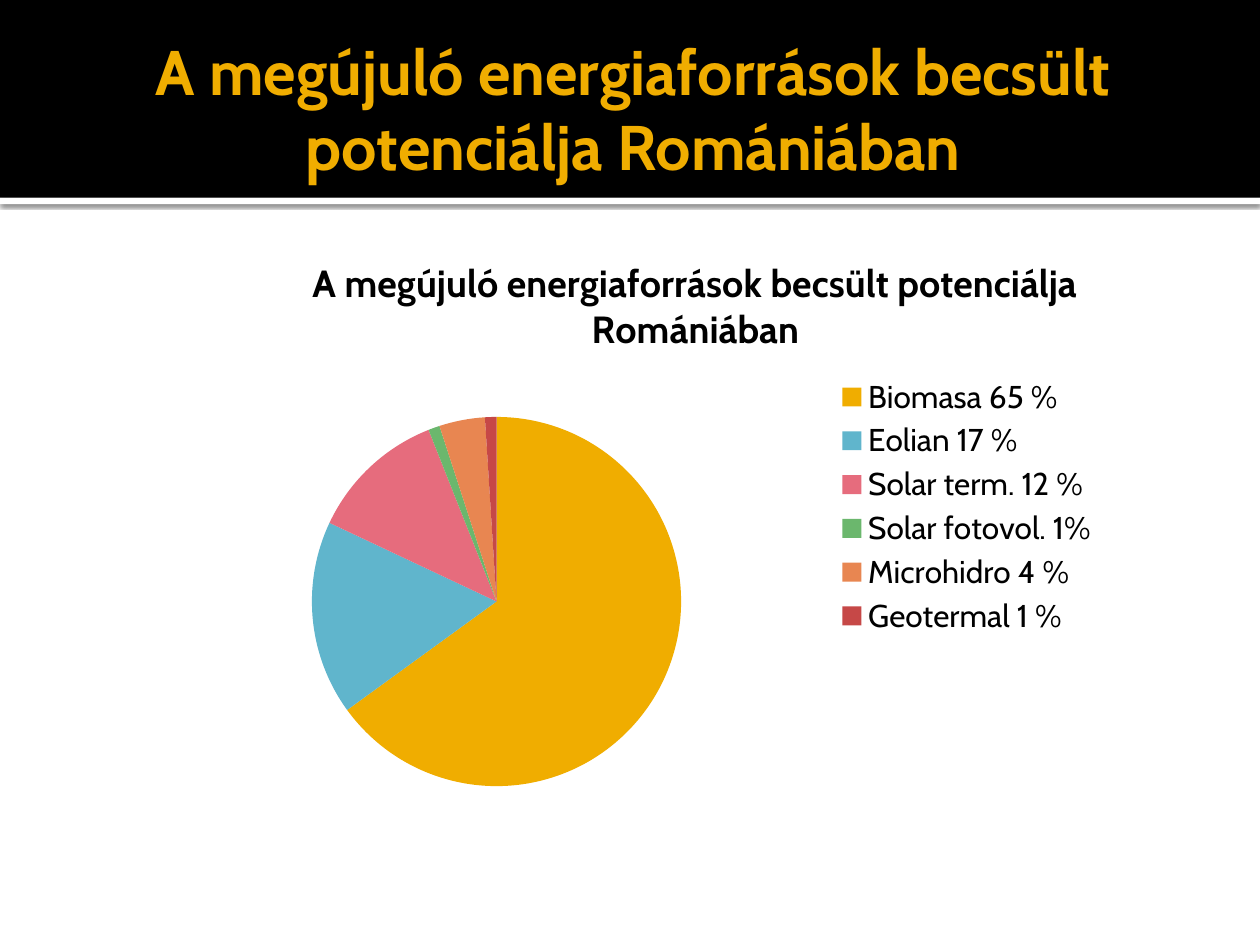
from lxml import etree
from pptx import Presentation
from pptx.chart.data import CategoryChartData
from pptx.dml.color import RGBColor
from pptx.enum.chart import XL_CHART_TYPE, XL_LEGEND_POSITION
from pptx.enum.shapes import MSO_SHAPE
from pptx.enum.text import MSO_ANCHOR, PP_ALIGN
from pptx.oxml import parse_xml
from pptx.oxml.ns import nsdecls, qn
from pptx.util import Inches, Pt

PIE = XL_CHART_TYPE.PIE
LEGEND_RIGHT = XL_LEGEND_POSITION.RIGHT
RECTANGLE = MSO_SHAPE.RECTANGLE
MIDDLE = MSO_ANCHOR.MIDDLE
CENTER = PP_ALIGN.CENTER

FONT = "Cabin"
HEADING = "A megújuló energiaforrások becsült potenciálja Romániában"
COLORS = {
    "band": "000000",
    "rule": "FFFFFF",
    "heading": "F0AD00",
    "text": "000000",
}
SOURCES = [
    ("Biomasa 65 %", 65, "F0AD00"),
    ("Eolian 17 %", 17, "60B5CC"),
    ("Solar term. 12 %", 12, "E66C7D"),
    ("Solar fotovol. 1%", 1, "6BB76D"),
    ("Microhidro 4 %", 4, "E88651"),
    ("Geotermal 1 %", 1, "C64847"),
]


def style_font(font, size, color, bold=False):
    """Set typeface, size, colour and weight of a font."""
    font.name = FONT
    font.size = Pt(size)
    font.bold = bold
    font.color.rgb = RGBColor.from_string(color)


def write_text(frame, text, size=18, color=COLORS["text"], bold=False, align=CENTER):
    """Write one formatted paragraph into a text frame."""
    paragraph = frame.paragraphs[0]
    paragraph.alignment = align
    run = paragraph.add_run()
    run.text = text
    style_font(run.font, size, color, bold)


def add_bar(slide, top, height, color):
    """Add a plain bar across the full slide width."""
    bar = slide.shapes.add_shape(RECTANGLE, 0, Inches(top), Inches(10), Inches(height))
    bar.shadow.inherit = False
    bar.fill.solid()
    bar.fill.fore_color.rgb = RGBColor.from_string(color)
    bar.line.fill.background()
    return bar


def cast_shadow(bar, blur, distance, opacity):
    """Give a bar a soft black shadow that falls downwards."""
    effects = bar.element.spPr.find(qn("a:effectLst"))
    shadow = etree.SubElement(
        effects, qn("a:outerShdw"), blurRad=str(Pt(blur)), dist=str(Pt(distance)),
        dir="5400000", algn="tl", rotWithShape="0")
    black = etree.SubElement(shadow, qn("a:srgbClr"), val="000000")
    etree.SubElement(black, qn("a:alpha"), val=str(opacity * 1000))


def add_heading(slide):
    """Add the slide heading on the dark band."""
    heading = slide.shapes.add_textbox(Inches(0.5), Inches(0.17), Inches(9), Inches(1.37))
    frame = heading.text_frame
    frame.word_wrap = True
    frame.vertical_anchor = MIDDLE
    frame.margin_right = Inches(0.05)
    write_text(frame, HEADING, size=36, color=COLORS["heading"], bold=True)


def place_part(part, inner=False, **fractions):
    """Fix a chart part at fractions of the chart area."""
    modes = [f"{key}Mode" for key in fractions if key in "xy"]
    settings = [("layoutTarget", "inner")] if inner else []
    settings += [(mode, "edge") for mode in modes] + list(fractions.items())
    body = "".join(f'<c:{tag} val="{value}"/>' for tag, value in settings)
    layout = parse_xml(
        f'<c:layout {nsdecls("c")}><c:manualLayout>{body}</c:manualLayout></c:layout>')
    for old in part.findall(qn("c:layout")):
        part.remove(old)
    leading = ("c:tx", "c:legendPos", "c:legendEntry")
    position = sum(len(part.findall(qn(tag))) for tag in leading)
    part.insert(position, layout)


def add_energy_pie(slide):
    """Add the pie chart of estimated renewable potential."""
    shares = CategoryChartData()
    shares.categories = [name for name, _, _ in SOURCES]
    shares.add_series(HEADING, [share for _, share, _ in SOURCES])
    chart = slide.shapes.add_chart(
        PIE, Inches(0.62), Inches(1.8), Inches(8.2), Inches(4.44), shares).chart
    style_font(chart.font, 18, COLORS["text"])

    chart.has_title = True
    write_text(chart.chart_title.text_frame, HEADING, size=21.6, bold=True)
    chart.has_legend = True
    chart.legend.position = LEGEND_RIGHT
    chart.legend.include_in_layout = False

    plot = chart.plots[0]
    plot.vary_by_categories = True
    for index, (_, _, color) in enumerate(SOURCES):
        fill = plot.series[0].points[index].format.fill
        fill.solid()
        fill.fore_color.rgb = RGBColor.from_string(color)

    chart_xml = chart.element.chart
    place_part(chart_xml.find(qn("c:title")), x=0.22, y=0.04)
    place_part(chart_xml.plotArea, inner=True, x=0.09, y=0.34, w=0.63, h=0.66)
    place_part(chart_xml.find(qn("c:legend")), x=0.73, y=0.26, w=0.26, h=0.48)


def main():
    """Build the slide and save it."""
    presentation = Presentation()
    presentation.slide_width = Inches(10)
    presentation.slide_height = Inches(7.5)
    slide = presentation.slides.add_slide(presentation.slide_layouts[6])
    rule = add_bar(slide, 1.57, 0.05, COLORS["rule"])
    cast_shadow(rule, blur=2.5, distance=0.8, opacity=60)
    add_bar(slide, 0, 1.57, COLORS["band"])
    add_heading(slide)
    add_energy_pie(slide)
    presentation.save("out.pptx")


if __name__ == "__main__":
    main()
